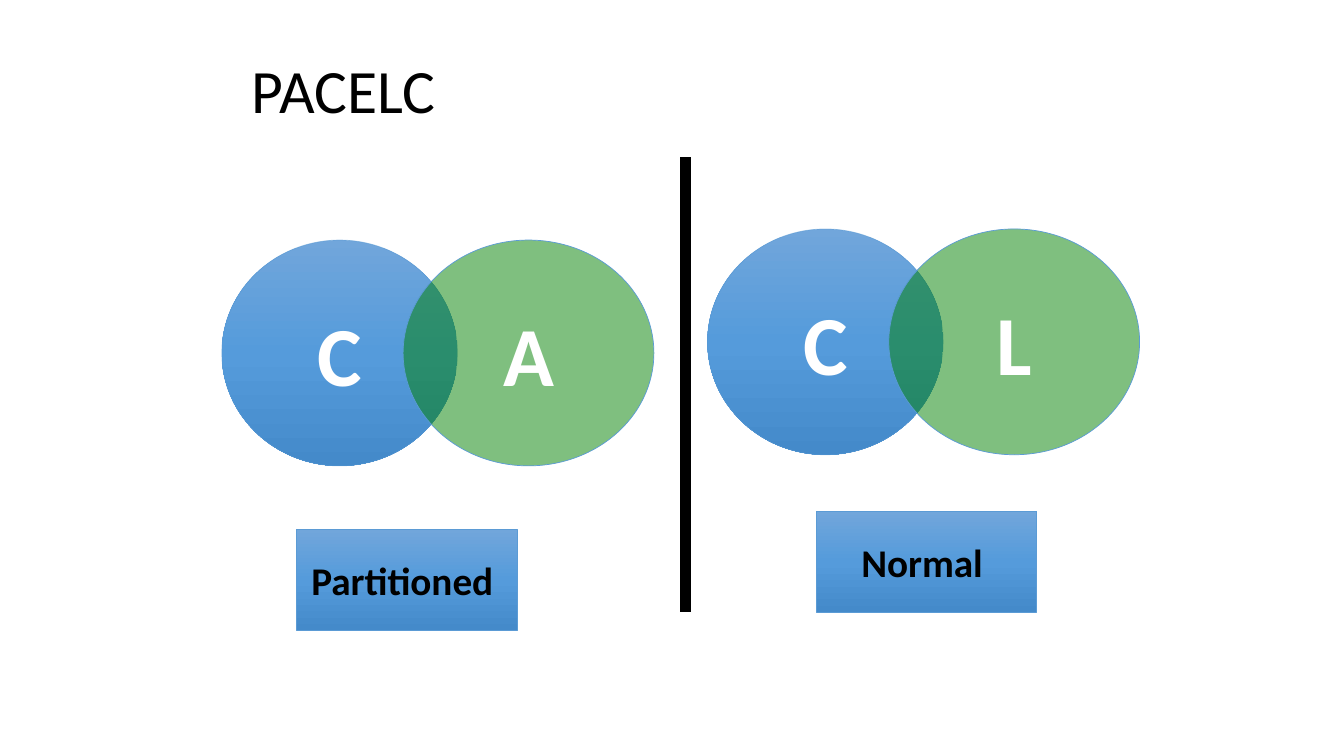
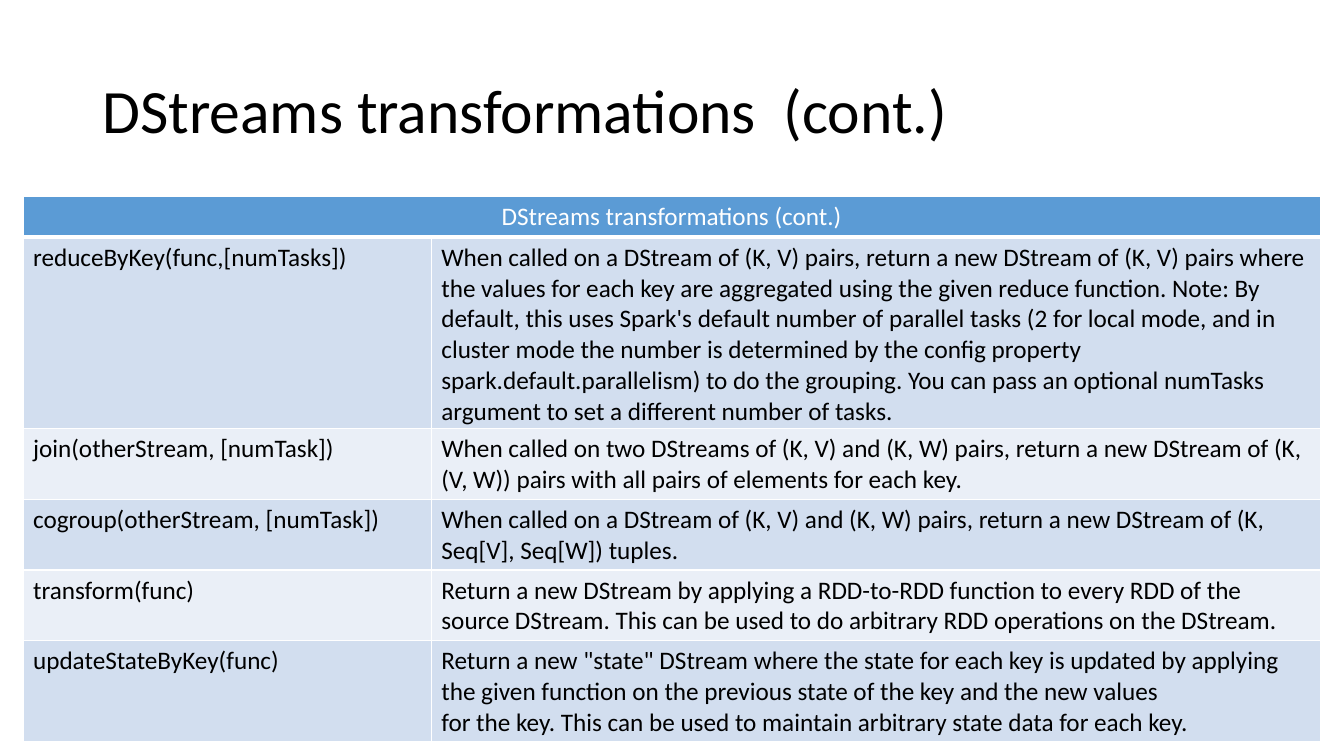
"""Build two slides: the PACELC trade-off and a table of DStreams transformations."""
from copy import deepcopy
from dataclasses import dataclass

from lxml.etree import SubElement
from pptx import Presentation
from pptx.dml.color import RGBColor
from pptx.enum.shapes import MSO_CONNECTOR, MSO_SHAPE
from pptx.enum.text import MSO_ANCHOR, PP_ALIGN
from pptx.oxml.ns import qn
from pptx.util import Cm, Pt


@dataclass(frozen=True)
class Theme:
    font: str = "Calibri"
    black: str = "000000"
    white: str = "FFFFFF"
    blue: str = "5B9BD5"
    rim: str = "5698D3"
    green: str = "008000"
    blend: tuple = ((0, "71A6DB"), (0.5, "559BDB"), (1, "448ACA"))
    bands: tuple = ("D2DEEF", "EAEFF7")
    title: int = 44
    letter: int = 60
    label: int = 28
    body: int = 18
    edge: float = 0.5
    bar: int = 8
    thin: int = 1
    thick: int = 3


@dataclass(frozen=True)
class Box:
    left: float
    top: float
    width: float
    height: float

    def place(self) -> tuple:
        return Cm(self.left), Cm(self.top), Cm(self.width), Cm(self.height)


@dataclass(frozen=True)
class Pair:
    left: float
    top: float
    other: str
    label: str
    box: Box


THEME = Theme()
PAIRS = (
    Pair(5.59, 6.05, "A", "Partitioned ", Box(7.47, 13.34, 5.56, 2.54)),
    Pair(17.83, 5.77, "L", "Normal ", Box(20.57, 12.88, 5.56, 2.54)),
)
HEAD = "DStreams transformations (cont.)"
ROWS = (
    ("reduceByKey(func,[numTasks])",
     "When called on a DStream of (K, V) pairs, return a new DStream of (K, V) pairs where "
     "the values for each key are aggregated using the given reduce function. Note: By "
     "default, this uses Spark's default number of parallel tasks (2 for local mode, and in "
     "cluster mode the number is determined by the config property "
     "spark.default.parallelism) to do the grouping. You can pass an optional numTasks "
     "argument to set a different number of tasks."),
    ("join(otherStream, [numTask])",
     "When called on two DStreams of (K, V) and (K, W) pairs, return a new DStream of (K, "
     "(V, W)) pairs with all pairs of elements for each key."),
    ("cogroup(otherStream, [numTask])",
     "When called on a DStream of (K, V) and (K, W) pairs, return a new DStream of (K, "
     "Seq[V], Seq[W]) tuples."),
    ("transform(func)",
     "Return a new DStream by applying a RDD-to-RDD function to every RDD of the "
     "source DStream. This can be used to do arbitrary RDD operations on the DStream."),
    ("updateStateByKey(func)",
     'Return a new "state" DStream where the state for each key is updated by applying '
     "the given function on the previous state of the key and the new values\n"
     "for the key. This can be used to maintain arbitrary state data for each key."),
)


def tint(hue: str) -> RGBColor:
    return RGBColor.from_string(hue)


def write(frame, text: str, size: int, hue: str, bold: bool = False,
          align=PP_ALIGN.LEFT) -> None:
    frame.text = text
    for line in frame.paragraphs:
        line.alignment = align
        for run in line.runs:
            run.font.name = THEME.font
            run.font.size = Pt(size)
            run.font.bold = bold
            run.font.color.rgb = tint(hue)


def fade(node) -> None:
    SubElement(node.find(".//" + qn("a:srgbClr")), qn("a:alpha"), val="50000")


def blend(shape) -> None:
    shape.fill.gradient()
    shape.fill.gradient_angle = 270
    stops = shape._element.spPr.find(qn("a:gradFill")).find(qn("a:gsLst"))
    stops.append(deepcopy(stops[-1]))
    for stop, (spot, hue) in zip(shape.fill.gradient_stops, THEME.blend):
        stop.position = spot
        stop.color.rgb = tint(hue)


def add_title(slide, text: str, box: Box) -> None:
    frame = slide.shapes.add_textbox(*box.place()).text_frame
    frame.word_wrap = True
    frame.vertical_anchor = MSO_ANCHOR.MIDDLE
    write(frame, text, THEME.title, THEME.black)
    frame.paragraphs[0].line_spacing = 0.9


def add_form(slide, kind, box: Box, text: str, size: int, hue: str, rim: str):
    shape = slide.shapes.add_shape(kind, *box.place())
    shape.shadow.inherit = False
    shape.line.color.rgb = tint(rim)
    shape.line.width = Pt(THEME.edge)
    shape.text_frame.vertical_anchor = MSO_ANCHOR.MIDDLE
    write(shape.text_frame, text, size, hue, True, PP_ALIGN.CENTER)
    return shape


def add_rings(slide, pair: Pair) -> None:
    ring = add_form(slide, MSO_SHAPE.OVAL, Box(pair.left, pair.top, 5.94, 5.69),
                    "C", THEME.letter, THEME.white, THEME.rim)
    blend(ring)
    fade(ring._element.spPr.find(qn("a:ln")))
    ring = add_form(slide, MSO_SHAPE.OVAL, Box(pair.left + 4.57, pair.top, 6.32, 5.69),
                    pair.other, THEME.letter, THEME.white, THEME.blue)
    ring.fill.solid()
    ring.fill.fore_color.rgb = tint(THEME.green)
    fade(ring._element.spPr.find(qn("a:solidFill")))


def add_bar(slide) -> None:
    bar = slide.shapes.add_connector(MSO_CONNECTOR.STRAIGHT,
                                     Cm(17.27), Cm(3.96), Cm(17.27), Cm(15.42))
    bar.line.color.rgb = tint(THEME.black)
    bar.line.width = Pt(THEME.bar)
    SubElement(bar._element.spPr, qn("a:effectLst"))


def paint(cell, hue: str, top: int, base: int) -> None:
    props = cell._tc.get_or_add_tcPr()
    for side, width in (("L", THEME.thin), ("R", THEME.thin), ("T", top), ("B", base)):
        line = SubElement(props, qn("a:ln" + side), w=str(Pt(width)))
        SubElement(SubElement(line, qn("a:solidFill")), qn("a:srgbClr"), val=THEME.white)
    cell.fill.solid()
    cell.fill.fore_color.rgb = tint(hue)


def add_grid(slide) -> None:
    count = len(ROWS) + 1
    box = Box(0.58, 4.95, 32.69, 1.03 * count)
    grid = slide.shapes.add_table(count, 2, *box.place()).table
    for col, width in zip(grid.columns, (10.29, 22.4)):
        col.width = Cm(width)
    for cell in grid.rows[0].cells:
        paint(cell, THEME.blue, THEME.thin, THEME.thick)
    grid.cell(0, 0).merge(grid.cell(0, 1))
    write(grid.cell(0, 0).text_frame, HEAD, THEME.body, THEME.white,
          align=PP_ALIGN.CENTER)
    for row, texts in enumerate(ROWS, 1):
        top = THEME.thick if row == 1 else THEME.thin
        for col, text in enumerate(texts):
            cell = grid.cell(row, col)
            paint(cell, THEME.bands[(row - 1) % 2], top, THEME.thin)
            write(cell.text_frame, text, THEME.body, THEME.black)


def main() -> None:
    deck = Presentation()
    deck.slide_width, deck.slide_height = Cm(33.87), Cm(19.05)
    blank = deck.slide_layouts[6]

    slide = deck.slides.add_slide(blank)
    add_title(slide, "PACELC", Box(6.1, 0.76, 22.86, 3.18))
    for pair in PAIRS:
        add_rings(slide, pair)
    add_bar(slide)
    for pair in PAIRS:
        blend(add_form(slide, MSO_SHAPE.RECTANGLE, pair.box, pair.label,
                       THEME.label, THEME.black, THEME.blue))

    slide = deck.slides.add_slide(blank)
    add_title(slide, "DStreams transformations  (cont.)", Box(2.33, 1.02, 29.21, 3.68))
    add_grid(slide)
    deck.save("out.pptx")


if __name__ == "__main__":
    main()
